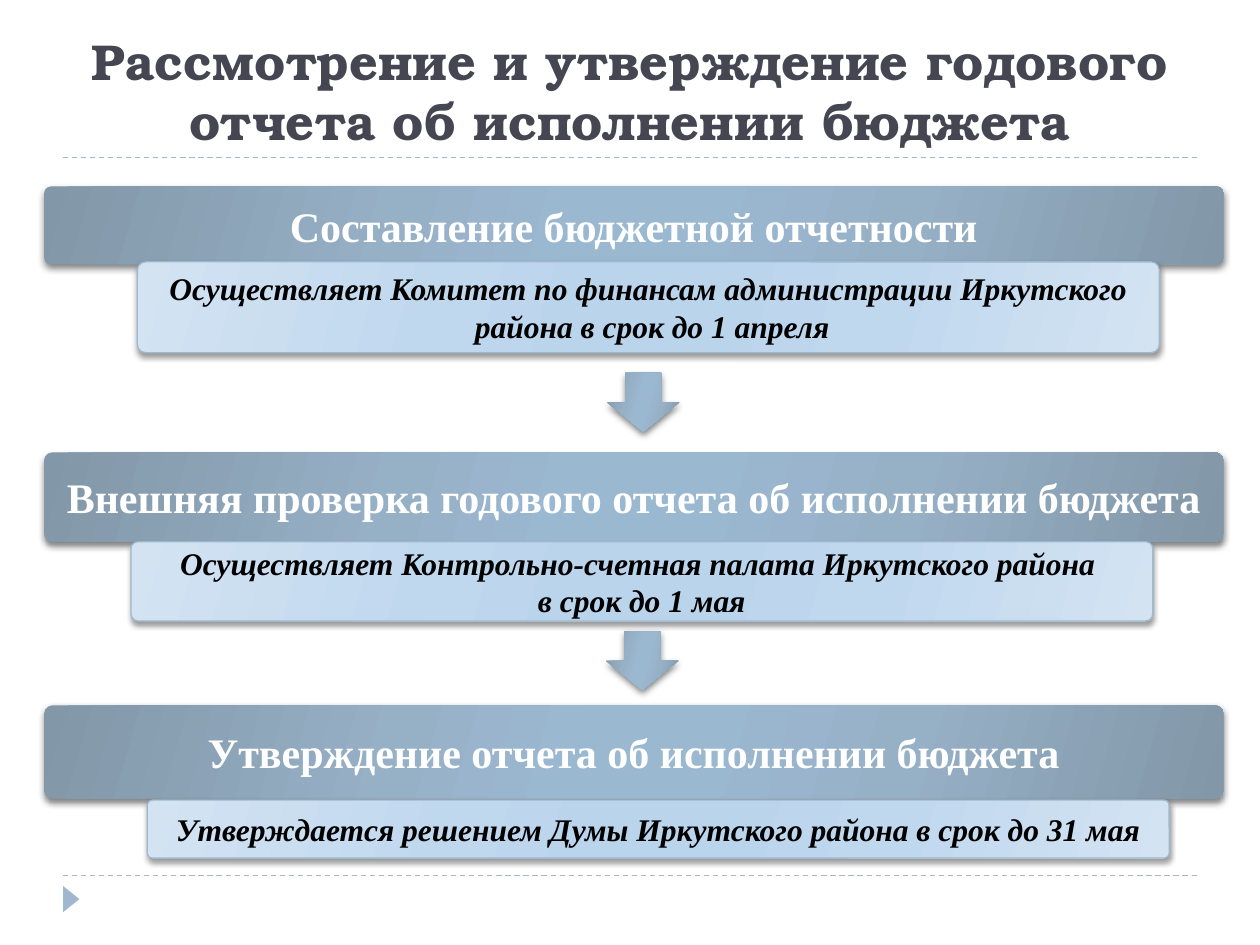
from lxml import etree
from pptx import Presentation
from pptx.dml.color import RGBColor
from pptx.enum.dml import MSO_LINE
from pptx.enum.shapes import MSO_CONNECTOR, MSO_SHAPE
from pptx.enum.text import MSO_ANCHOR, MSO_AUTO_SIZE, PP_ALIGN
from pptx.oxml.ns import qn
from pptx.util import Cm, Pt

STRAIGHT = MSO_CONNECTOR.STRAIGHT
ROUNDED = MSO_SHAPE.ROUNDED_RECTANGLE
DOWN_ARROW = MSO_SHAPE.DOWN_ARROW
TRIANGLE = MSO_SHAPE.ISOSCELES_TRIANGLE
DASH = MSO_LINE.DASH
CENTER = PP_ALIGN.CENTER
MIDDLE, BOTTOM = MSO_ANCHOR.MIDDLE, MSO_ANCHOR.BOTTOM
NO_AUTOFIT = MSO_AUTO_SIZE.NONE

COLORS = {
    "title": "464653",
    "accent": "9FB8CD",
    "white": "FFFFFF",
    "black": "000000",
}
STOPS = (0, 30, 45, 55, 73, 100)
DARK = ("8297A8", "96B0C6", "9BB8D1")
LIGHT = ("D3E3F2", "C0D8EE", "BAD4EC")
GRADIENT_ANGLE = 16


def rgb(name):
    return RGBColor.from_string(COLORS[name])


def write(tf, text, font="Times New Roman", size=18, color="black",
          bold=True, italic=False, anchor=MIDDLE, wrap=False):
    tf.auto_size = NO_AUTOFIT
    tf.word_wrap = wrap
    tf.vertical_anchor = anchor
    p = tf.paragraphs[0]
    p.text = text
    p.alignment = CENTER
    for r in p.runs:
        r.font.name = font
        r.font.size = Pt(size)
        r.font.bold = bold
        r.font.italic = italic
        r.font.color.rgb = rgb(color)


def add_color(parent, value, alpha=None):
    clr = etree.SubElement(parent, qn("a:srgbClr"), val=value)
    if alpha is not None:
        etree.SubElement(clr, qn("a:alpha"), val=str(alpha * 1000))


class Deck:
    def __init__(self, prs):
        self.s = prs.slides.add_slide(prs.slide_layouts[5])

    def title(self, text, x, y, w, h):
        sp = self.s.shapes.title
        sp.left, sp.top, sp.width, sp.height = Cm(x), Cm(y), Cm(w), Cm(h)
        write(sp.text_frame, text, font="TeX Gyre Bonum", size=28.8,
              color="title", anchor=BOTTOM, wrap=True)

    def rule(self, x1, x2, y):
        line = self.s.shapes.add_connector(STRAIGHT, Cm(x1), Cm(y), Cm(x2), Cm(y))
        line.line.color.rgb = rgb("accent")
        line.line.width = Pt(0.75)
        line.line.dash_style = DASH
        etree.SubElement(line._element.spPr, qn("a:effectLst"))

    def shape(self, kind, x, y, w, h):
        sp = self.s.shapes.add_shape(kind, Cm(x), Cm(y), Cm(w), Cm(h))
        sp.shadow.inherit = False
        sp.line.fill.background()
        return sp

    def marker(self, x, y, w, h):
        sp = self.shape(TRIANGLE, x, y, w, h)
        sp.rotation = 90
        sp.fill.solid()
        sp.fill.fore_color.rgb = rgb("accent")

    def glossy(self, kind, x, y, w, h, tones=DARK, alpha=50, blur=4):
        sp = self.shape(kind, x, y, w, h)
        sp.fill.gradient()
        sp.fill.gradient_angle = 360 - GRADIENT_ANGLE
        stops = sp._element.spPr.find(".//" + qn("a:gsLst"))
        for old in list(stops):
            stops.remove(old)
        for pos, tone in zip(STOPS, tones + tones[::-1]):
            add_color(etree.SubElement(stops, qn("a:gs"), pos=str(pos * 1000)), tone)
        effects = sp._element.spPr.find(qn("a:effectLst"))
        shadow = etree.SubElement(effects, qn("a:outerShdw"), blurRad=str(Pt(blur)),
                                  dist=str(Pt(2)), dir="5400000", rotWithShape="0")
        add_color(shadow, COLORS["black"], alpha)
        return sp

    def stage(self, text, y, h):
        sp = self.glossy(ROUNDED, 0.89, y, 23.77, h)
        sp.adjustments[0] = 0.09
        write(sp.text_frame, text, size=24, color="white")

    def detail(self, text, x, y, h):
        sp = self.glossy(ROUNDED, x, y, 20.6, h, tones=LIGHT, alpha=40, blur=3)
        sp.adjustments[0] = 0.09
        sp.line.color.rgb = rgb("accent")
        sp.line.width = Pt(0.75)
        write(sp.text_frame, text, italic=True)

    def arrow(self, x, y):
        self.glossy(DOWN_ARROW, x, y, 1.45, 1.19)


STAGES = [
    ("Составление бюджетной отчетности", 3.76, 1.57,
     "Осуществляет Комитет по финансам администрации Иркутского\n района в срок до 1 апреля",
     2.77, 5.28, 1.83),
    ("Внешняя проверка годового отчета об исполнении бюджета", 9.12, 1.8,
     "Осуществляет Контрольно-счетная палата Иркутского района \nв срок до 1 мая",
     2.64, 10.92, 1.6),
    ("Утверждение отчета об исполнении бюджета", 14.22, 1.88,
     "Утверждается решением Думы Иркутского района в срок до 31 мая",
     2.97, 16.13, 1.17),
]
ARROWS = [(12.24, 7.52), (12.22, 12.73)]


def main():
    prs = Presentation()
    prs.slide_width, prs.slide_height = Cm(25.4), Cm(19.05)
    deck = Deck(prs)
    for y in (17.65, 3.18):
        deck.rule(1.27, 24.13, y)
    deck.marker(1.17, 17.96, 0.53, 0.33)
    deck.title("Рассмотрение и утверждение годового отчета об исполнении бюджета",
               1.27, 0.43, 22.86, 2.74)
    for name, y, h, note, note_x, note_y, note_h in STAGES:
        deck.stage(name, y, h)
        deck.detail(note, note_x, note_y, note_h)
    for x, y in ARROWS:
        deck.arrow(x, y)
    prs.save("out.pptx")


if __name__ == "__main__":
    main()
